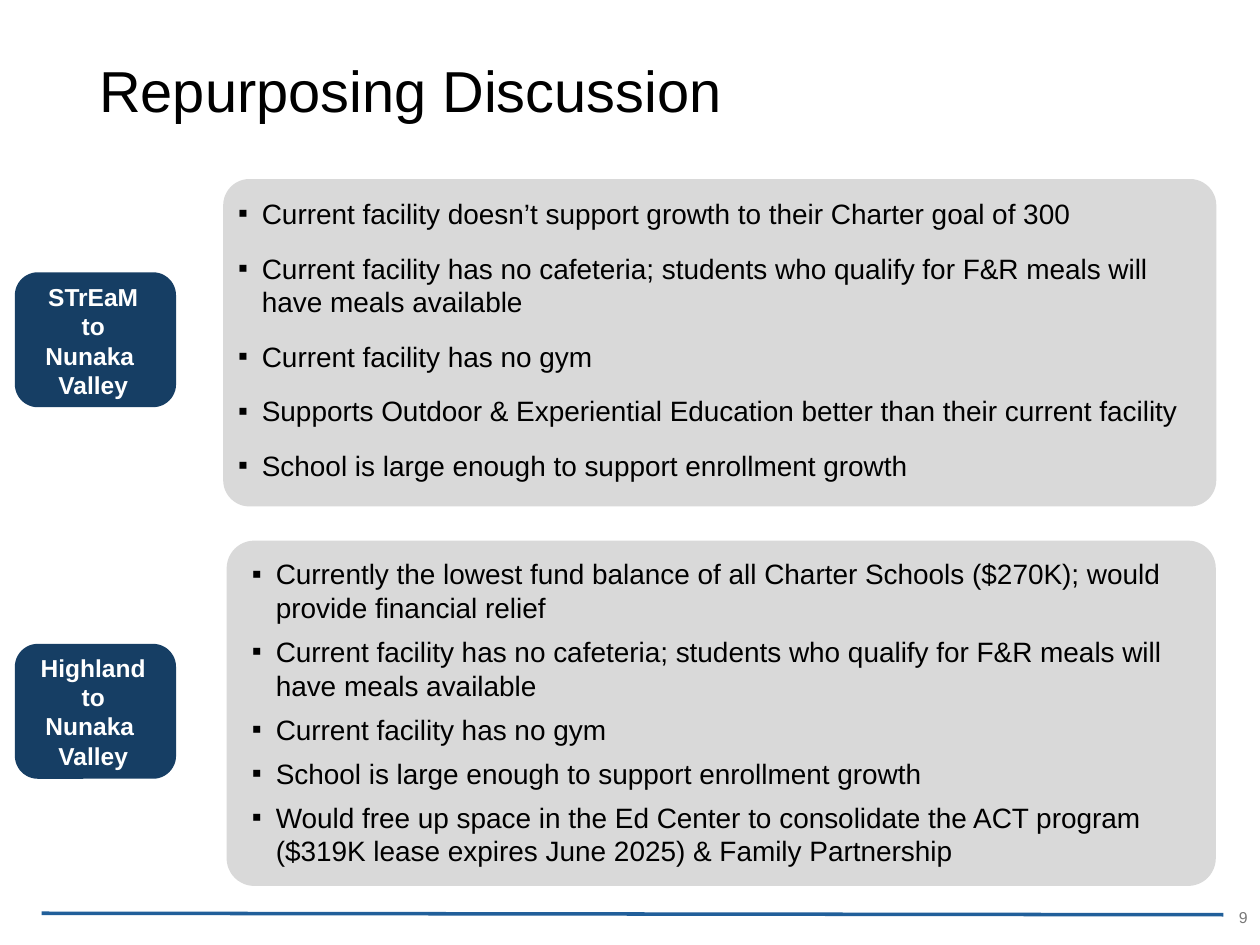
from pptx import Presentation
from pptx.dml.color import RGBColor
from pptx.enum.shapes import MSO_CONNECTOR, MSO_SHAPE
from pptx.enum.text import MSO_ANCHOR, PP_ALIGN
from pptx.oxml.ns import qn
from pptx.util import Cm, Pt
from lxml import etree

ROUNDED = MSO_SHAPE.ROUNDED_RECTANGLE
STRAIGHT = MSO_CONNECTOR.STRAIGHT
TOP, MIDDLE = MSO_ANCHOR.TOP, MSO_ANCHOR.MIDDLE
LEFT, CENTER, RIGHT = PP_ALIGN.LEFT, PP_ALIGN.CENTER, PP_ALIGN.RIGHT

FONT = "Arial"
BLACK, WHITE, GRAY = "000000", "FFFFFF", "797979"
PANEL, NAVY, RULE = "D9D9D9", "163E64", "215F9A"
BULLET_INDENT = Cm(0.48)


def color(value):
    return RGBColor.from_string(value)


class SlideBuilder:
    def __init__(self, page):
        self.page = page

    def rounded_box(self, place, fill, corner):
        box = self.page.shapes.add_shape(ROUNDED, *map(Cm, place))
        box.shadow.inherit = False
        box.adjustments[0] = corner
        box.fill.solid()
        box.fill.fore_color.rgb = color(fill)
        box.line.fill.background()

    def text(self, place, lines, size, ink=BLACK, align=LEFT, anchor=TOP,
             bold=False, wrap=True):
        box = self.page.shapes.add_textbox(*map(Cm, place))
        frame = box.text_frame
        frame.word_wrap = wrap
        frame.vertical_anchor = anchor
        frame.text = "\n".join(lines)
        for para in frame.paragraphs:
            para.alignment = align
            for span in para.runs:
                span.font.name = FONT
                span.font.size = Pt(size)
                span.font.bold = bold
                span.font.color.rgb = color(ink)
        return frame

    def bullets(self, place, lines, gap):
        for para in self.text(place, lines, 16).paragraphs:
            para.space_after = Pt(gap)
            properties = para._p.get_or_add_pPr()
            properties.set("marL", str(BULLET_INDENT))
            properties.set("indent", str(-BULLET_INDENT))
            etree.SubElement(properties, qn("a:buFont"), typeface=FONT)
            etree.SubElement(properties, qn("a:buChar"), char="▪")

    def label(self, place, text_place, lines):
        self.rounded_box(place, NAVY, 0.17)
        self.text(text_place, lines, 14, WHITE, CENTER, bold=True, wrap=False)

    def line(self, ends, ink, width):
        line = self.page.shapes.add_connector(STRAIGHT, *map(Cm, ends))
        line.line.color.rgb = color(ink)
        line.line.width = Pt(width)
        etree.SubElement(line._element.spPr, qn("a:effectLst"))


SECTIONS = [
    {
        "panel": (4.5, 3.61, 20.02, 6.6),
        "list": (4.55, 3.84, 19.61, 6.07),
        "gap": 12,
        "points": [
            "Current facility doesn’t support growth to their Charter goal of 300",
            "Current facility has no cafeteria; students who qualify for F&R meals "
            "will have meals available",
            "Current facility has no gym",
            "Supports Outdoor & Experiential Education better than their current facility",
            "School is large enough to support enrollment growth",
        ],
        "label": (0.3, 5.49, 3.25, 2.72),
        "label_text": (0.66, 5.56, 2.44, 2.64),
        "school": "STrEaM",
    },
    {
        "panel": (4.57, 10.9, 19.94, 6.96),
        "list": (4.83, 11.1, 19.94, 6.58),
        "gap": 6,
        "points": [
            "Currently the lowest fund balance of all Charter Schools ($270K); "
            "would provide financial relief",
            "Current facility has no cafeteria; students who qualify for F&R meals "
            "will have meals available",
            "Current facility has no gym",
            "School is large enough to support enrollment growth",
            "Would free up space in the Ed Center to consolidate the ACT program "
            "($319K lease expires June 2025) & Family Partnership",
        ],
        "label": (0.3, 12.98, 3.25, 2.72),
        "label_text": (0.56, 13.03, 2.64, 2.64),
        "school": "Highland",
    },
]


def main():
    deck = Presentation()
    deck.slide_width, deck.slide_height = Cm(25.4), Cm(19.05)
    builder = SlideBuilder(deck.slides.add_slide(deck.slide_layouts[6]))

    builder.line((24.66, 18.44, 0.84, 18.41), RULE, 2)
    title = builder.text((1.75, 0.05, 21.9, 3.68), ["Repurposing Discussion"],
                         33, anchor=MIDDLE)
    title.paragraphs[0].line_spacing = 0.9
    builder.text((19.69, 17.98, 5.71, 1.02), ["9"], 9, GRAY, RIGHT, MIDDLE)

    for section in SECTIONS:
        builder.rounded_box(section["panel"], PANEL, 0.08)
        builder.bullets(section["list"], section["points"], section["gap"])
        builder.label(section["label"], section["label_text"],
                      [section["school"], " to ", "Nunaka ", "Valley"])

    deck.save("out.pptx")


if __name__ == "__main__":
    main()
